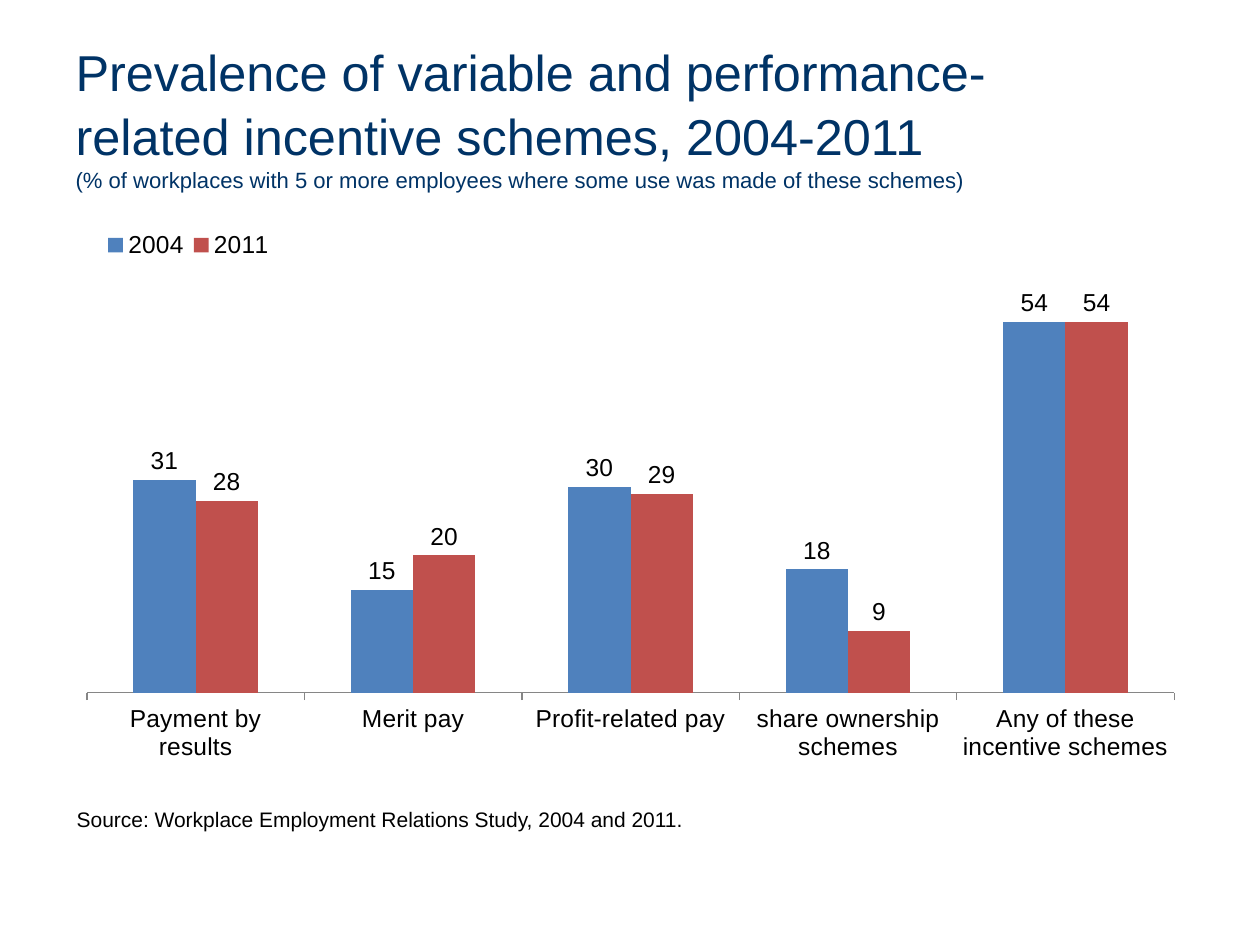
"""Build a slide with a column chart of incentive scheme prevalence, 2004-2011."""
import copy

import pptx
import pptx.chart.data
import pptx.dml.color
import pptx.enum.chart
import pptx.enum.text
import pptx.oxml
import pptx.util
from pptx.oxml.ns import nsdecls, qn

Pt = pptx.util.Pt
FONT = "Arial"
COLOURS = {"title": "003366", "text": "000000", "axis": "868686",
           "2004": "4F81BD", "2011": "C0504D"}
TITLE = [
    ("Prevalence of variable and performance-related incentive schemes, 2004-2011", 28.8),
    ("(% of workplaces with 5 or more employees where some use was made of these schemes)", 12.6),
]
SOURCE = "Source: Workplace Employment Relations Study, 2004 and 2011."
SCHEMES = ["Payment by results", "Merit pay", "Profit-related pay",
           "share ownership schemes", "Any of these incentive schemes"]
SERIES = {"2004": [31, 15, 30, 18, 54], "2011": [28, 20, 29, 9, 54]}
PLOT_LAYOUT = {"x": 0.02, "y": 0.11, "w": 0.96, "h": 0.75}
LEGEND_LAYOUT = {"x": 0.03, "y": 0.01, "w": 0.16, "h": 0.07}


def colour(name):
    return pptx.dml.color.RGBColor.from_string(COLOURS[name])


def style(font, size, name):
    font.name = FONT
    font.size = Pt(size)
    font.bold = False
    font.color.rgb = colour(name)


def manual_layout(place, inner=False):
    target = '<c:layoutTarget val="inner"/>' if inner else ""
    modes = "".join(f'<c:{axis}Mode val="edge"/>' for axis in "xy")
    sizes = "".join(f'<c:{key} val="{value}"/>' for key, value in place.items())
    return pptx.oxml.parse_xml(
        f'<c:layout {nsdecls("c")}><c:manualLayout>{target}{modes}{sizes}'
        '</c:manualLayout></c:layout>')


def set_layout(parent, layout, index):
    for old in parent.findall(qn("c:layout")):
        parent.remove(old)
    parent.insert(index, layout)


def add_title(page):
    title = page.shapes.title
    title.left, title.top, title.width, title.height = Pt(36), Pt(21.6), Pt(562.3), Pt(89.3)
    frame = title.text_frame
    frame.word_wrap = True
    frame.vertical_anchor = pptx.enum.text.MSO_ANCHOR.MIDDLE
    frame.text = "\v".join(text for text, size in TITLE)
    para = frame.paragraphs[0]
    para.alignment = pptx.enum.text.PP_ALIGN.LEFT
    para.line_spacing = 1.05
    for span, (text, size) in zip(para.runs, TITLE):
        style(span.font, size, "title")
    line_break = para._p.find(qn("a:br"))
    line_break.append(copy.deepcopy(para.runs[0]._r.rPr))


def add_chart(page):
    data = pptx.chart.data.CategoryChartData()
    data.categories = SCHEMES
    for name, values in SERIES.items():
        data.add_series(name, values)
    chart = page.shapes.add_chart(
        pptx.enum.chart.XL_CHART_TYPE.COLUMN_CLUSTERED,
        Pt(36.7), Pt(126), Pt(647.3), Pt(313.9), data).chart
    style(chart.font, 14, "text")
    chart.has_title = False
    chart.has_legend = True
    chart.legend.position = pptx.enum.chart.XL_LEGEND_POSITION.TOP
    chart.legend.include_in_layout = False
    set_layout(chart.legend._element, manual_layout(LEGEND_LAYOUT), 1)
    plot = chart.plots[0]
    set_layout(plot._element.getparent(), manual_layout(PLOT_LAYOUT, True), 0)
    plot.vary_by_categories = False
    plot.gap_width = 150
    plot.overlap = 0
    for series in plot.series:
        series.format.fill.solid()
        series.format.fill.fore_color.rgb = colour(series.name)
        labels = series.data_labels
        labels.show_value = True
        labels.position = pptx.enum.chart.XL_LABEL_POSITION.OUTSIDE_END
        style(labels.font, 14, "text")
    values = chart.value_axis
    values.visible = False
    values.has_major_gridlines = False
    values.minimum_scale, values.maximum_scale = 0, 60
    schemes = chart.category_axis
    schemes.major_tick_mark = pptx.enum.chart.XL_TICK_MARK.OUTSIDE
    schemes.format.line.color.rgb = colour("axis")
    schemes.format.line.width = Pt(0.75)
    style(schemes.tick_labels.font, 14, "text")


def add_source(page):
    box = page.shapes.add_textbox(Pt(36.7), Pt(457.2), Pt(363.6), Pt(21.6))
    frame = box.text_frame
    frame.word_wrap = False
    frame.auto_size = pptx.enum.text.MSO_AUTO_SIZE.SHAPE_TO_FIT_TEXT
    frame.text = SOURCE
    style(frame.paragraphs[0].runs[0].font, 12, "text")


def main():
    deck = pptx.Presentation()
    deck.slide_width, deck.slide_height = Pt(720), Pt(540)
    page = deck.slides.add_slide(deck.slide_layouts[5])
    add_chart(page)
    add_source(page)
    add_title(page)
    deck.save("out.pptx")


if __name__ == "__main__":
    main()
